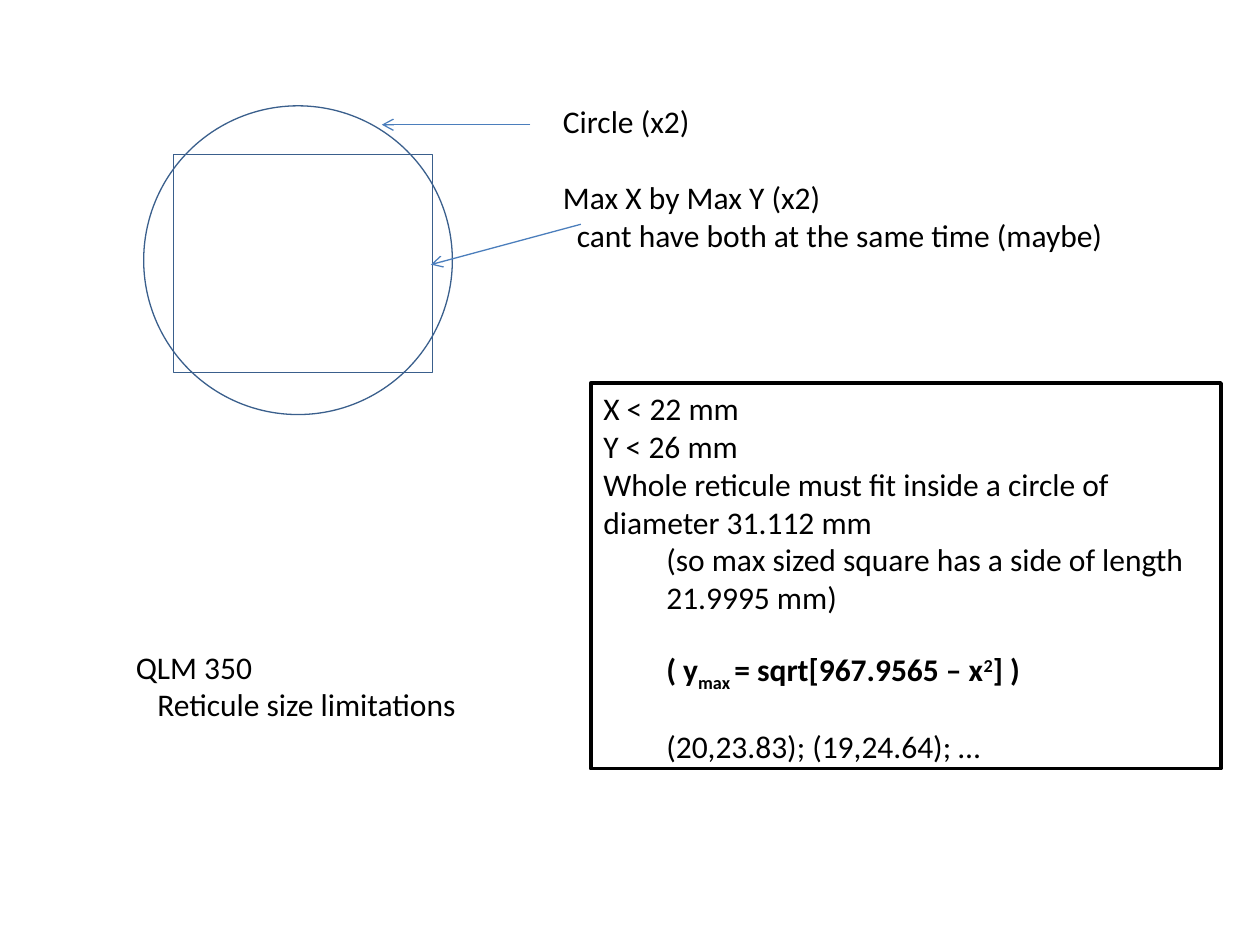
from dataclasses import dataclass

from lxml.etree import SubElement
from pptx import Presentation
from pptx.dml.color import RGBColor as RGB
from pptx.enum.shapes import MSO_CONNECTOR as Link, MSO_SHAPE as Shape
from pptx.enum.text import MSO_ANCHOR as Anchor, MSO_AUTO_SIZE as Fit, PP_ALIGN as Align
from pptx.oxml.ns import qn
from pptx.util import Inches, Pt


@dataclass(frozen=True)
class Theme:
    font: str = "Calibri"
    size: Pt = Pt(18)
    ink: RGB = RGB(0, 0, 0)
    edge: RGB = RGB(0x3A, 0x5F, 0x8C)
    arrow: RGB = RGB(0x4B, 0x7E, 0xBC)


theme = Theme()


def write(frame, text, indent=0, before=0, bold=False):
    """Add a paragraph; text is a string or a list of (string, baseline %)."""
    first = frame.paragraphs[0]
    para = frame.add_paragraph() if first.runs else first
    para.alignment = Align.LEFT
    para.space_before = Pt(before)
    props = para._p.get_or_add_pPr()
    props.set("marL", str(Inches(indent)))
    props.set("indent", "0")
    for part, base in [(text, 0)] if isinstance(text, str) else text:
        run = para.add_run()
        run.text = part
        font = run.font
        font.name, font.size, font.bold = theme.font, theme.size, bold
        font.color.rgb = theme.ink
        if base:
            run._r.get_or_add_rPr().set("baseline", str(base * 1000))


deck = Presentation()
deck.slide_width, deck.slide_height = Inches(10), Inches(7.5)
shapes = deck.slides.add_slide(deck.slide_layouts[6]).shapes

# Circle, reticule and the framed limits
outlines = [
    (Shape.OVAL, (1.14, 0.84, 2.45, 2.45), theme.edge, 0.75),
    (Shape.RECTANGLE, (1.38, 1.23, 2.05, 1.73), theme.edge, 0.5),
    (Shape.RECTANGLE, (4.69, 3.04, 5, 3.06), theme.ink, 2.25),
]
for kind, place, color, width in outlines:
    box = shapes.add_shape(kind, *map(Inches, place))
    box.shadow.inherit = False
    box.fill.background()
    box.line.color.rgb = color
    box.line.width = Pt(width)

limits = box.text_frame
limits.word_wrap = True
limits.auto_size = Fit.SHAPE_TO_FIT_TEXT
limits.vertical_anchor = Anchor.TOP
write(limits, "X < 22 mm")
write(limits, "Y < 26 mm")
write(limits, "Whole reticule must fit inside a circle of diameter 31.112 mm")
write(limits, "(so max sized square has a side of length 21.9995 mm)", indent=0.5)
rule = [("( y", 0), ("max ", -25), ("= sqrt[967.9565 – x", 0), ("2", 30), ("] )", 0)]
write(limits, rule, indent=0.5, before=19.5, bold=True)
write(limits, "(20,23.83); (19,24.64); …", indent=0.5, before=19.5)

# Free labels: text, indent, space before
labels = [
    ((4.37, 0.76, 4.54, 1.31), [
        ("Circle (x2)", 0, 0),
        ("Max X by Max Y (x2)", 0, 22),
        ("cant have both at the same time (maybe)", 0.11, 0),
    ]),
    ((0.98, 5.09, 2.77, 0.71), [
        ("QLM 350", 0, 0),
        ("Reticule size limitations", 0.17, 0),
    ]),
]
for place, lines in labels:
    frame = shapes.add_textbox(*map(Inches, place)).text_frame
    frame.word_wrap = False
    frame.auto_size = Fit.SHAPE_TO_FIT_TEXT
    for text, indent, before in lines:
        write(frame, text, indent=indent, before=before)

# Arrows from the labels to the outlines
for ends in [(4.21, 0.99, 3.03, 0.99), (4.61, 1.78, 3.42, 2.1)]:
    arrow = shapes.add_connector(Link.STRAIGHT, *map(Inches, ends))
    arrow.line.color.rgb = theme.arrow
    arrow.line.width = Pt(0.75)
    SubElement(arrow.line._get_or_add_ln(), qn("a:tailEnd"), type="arrow")
    SubElement(arrow._element.spPr, qn("a:effectLst"))

deck.save("out.pptx")
